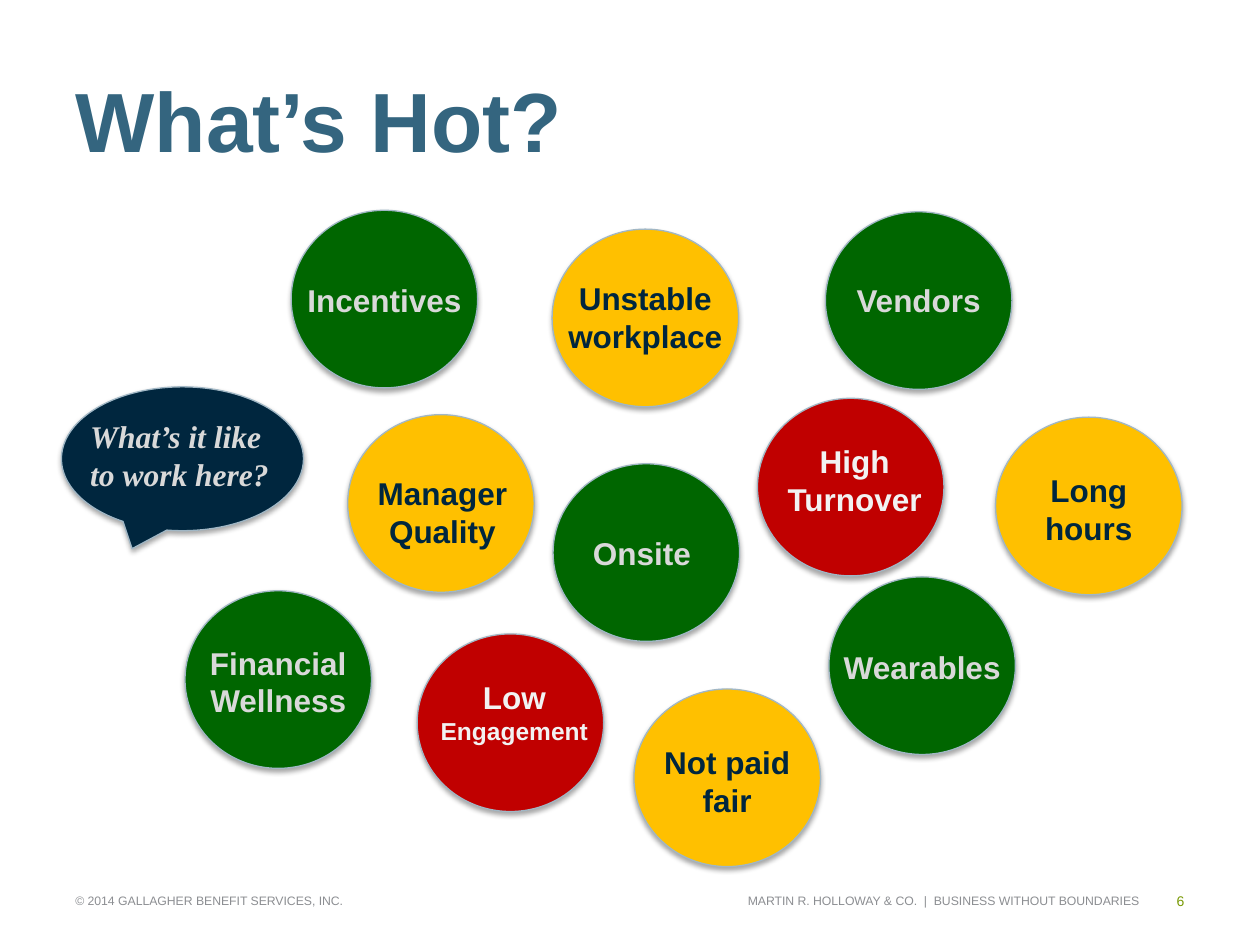
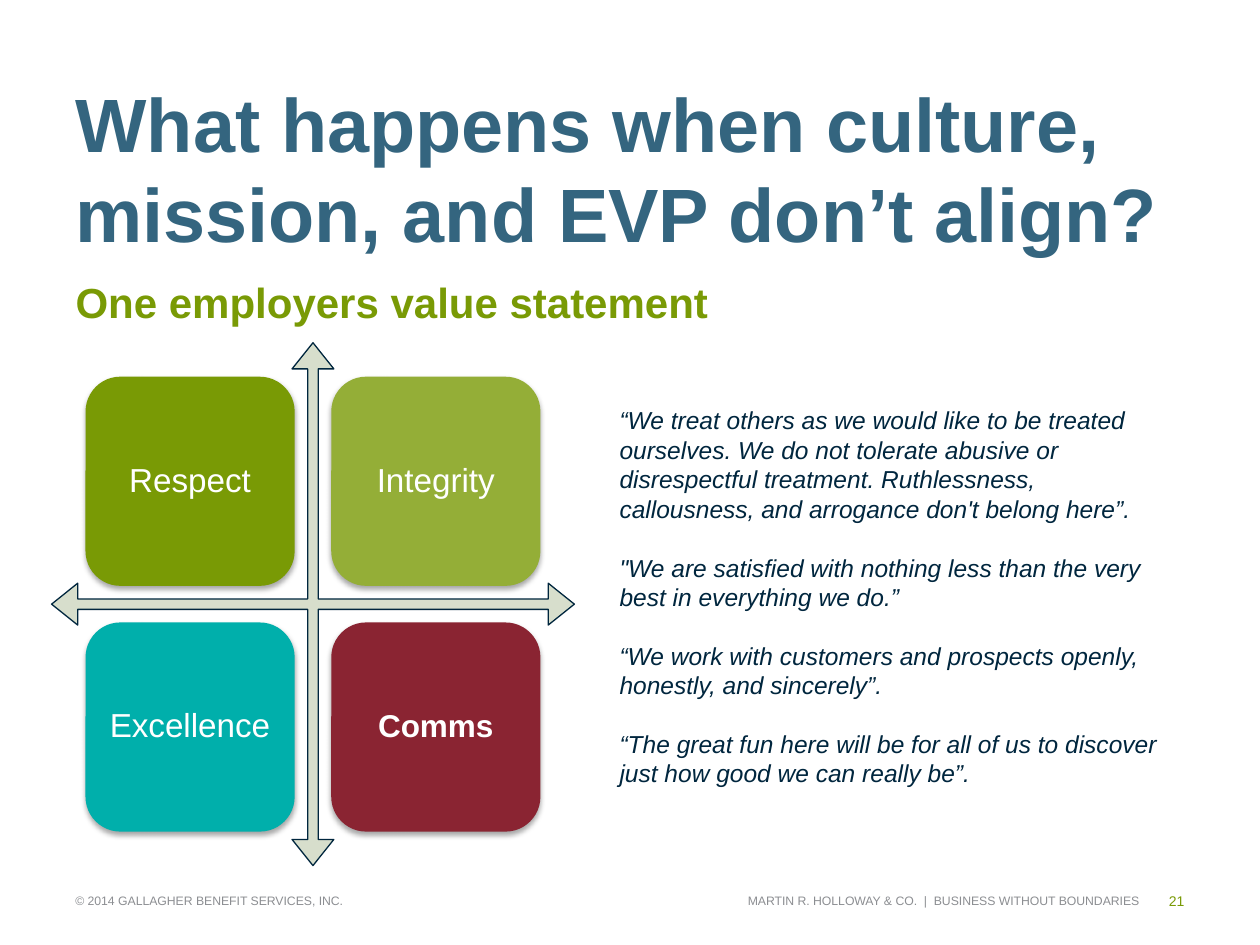
from pptx import Presentation
from pptx.dml.color import RGBColor
from pptx.enum.shapes import MSO_SHAPE as Shape
from pptx.enum.text import MSO_ANCHOR as Anchor, MSO_AUTO_SIZE as Fit, PP_ALIGN as Align
from pptx.oxml import parse_xml
from pptx.oxml.ns import nsdecls, qn
from pptx.util import Cm, Pt

HUES = {
    "title": "34657F", "olive": "799A05", "moss": "94AE37", "teal": "00AFAB",
    "wine": "8A2432", "navy": "00263E", "edge": "A1B7C5", "sage": "D7DECC",
    "green": "006600", "gold": "FFC000", "red": "C00000",
    "silver": "D9D9D9", "pale": "F2F2F2", "white": "FFFFFF", "grey": "8C8E92",
}
INKS = {"green": "silver", "gold": "navy", "red": "pale"}
SHADE = (
    f'<a:outerShdw {nsdecls("a")} blurRad="39370" dist="22860" dir="5400000" rotWithShape="0">'
    '<a:srgbClr val="000000"><a:alpha val="35000"/></a:srgbClr></a:outerShdw>'
)
OWNER = "© 2014 GALLAGHER BENEFIT SERVICES, INC."
BRAND = "MARTIN R. HOLLOWAY & CO.  |  BUSINESS WITHOUT BOUNDARIES"
BUBBLES = [
    ("green", 5.87, 4.24, 0, 1.3, ["Incentives"]),
    ("green", 16.71, 11.63, 0, 1.3, ["Wearables"]),
    ("green", 11.15, 9.35, 0, 1.3, ["Onsite "]),
    ("green", 16.64, 4.27, 0, 1.28, ["Vendors"]),
    ("green", 3.73, 11.91, 0, 0.94, ["Financial Wellness"]),
    ("gold", 20.07, 8.41, 0, 0.97, ["Long hours"]),
    ("gold", 12.78, 13.89, 0, 0.97, ["Not paid fair"]),
    ("gold", 11.13, 4.62, 0, 0.89, ["Unstable", "workplace"]),
    ("gold", 7.01, 8.36, 0.03, 1.07, ["Manager Quality"]),
    ("red", 15.27, 8.03, 0.08, 0.76, ["High Turnover"]),
    ("red", 8.41, 12.78, 0.08, 0.76, ["Low "]),
]
TILES = [
    ("olive", "Respect", 19, False), ("moss", "Integrity", 19, False),
    ("teal", "Excellence", 19, False), ("wine", "Comms", 18, True),
]
QUOTES = [
    "“We treat others as we would like to be treated ourselves. We do not tolerate "
    "abusive or disrespectful treatment. Ruthlessness, callousness, and arrogance "
    "don't belong here”.",
    "\"We are satisfied with nothing less than the very best in everything we do.”",
    "“We work with customers and prospects openly, honestly, and sincerely”.",
    "“The great fun here will be for all of us to discover just how good we can really be”.",
]


def tint(name):
    return RGBColor.from_string(HUES[name])


def write(frame, lines, size, ink, bold=False, italic=False, face="Arial",
          align=Align.LEFT, anchor=Anchor.TOP, gap=0):
    frame.word_wrap = True
    frame.auto_size = Fit.NONE
    frame.vertical_anchor = anchor
    for i, line in enumerate(lines):
        para = frame.paragraphs[0] if i == 0 else frame.add_paragraph()
        para.text = line
        para.alignment = align
        para.space_before = Pt(gap if i else 0)
        font = para.font
        font.name, font.size = face, Pt(size)
        font.bold, font.italic = bold, italic
        font.color.rgb = tint(ink)


def label(slide, box, lines, size, ink, **style):
    frame = slide.shapes.add_textbox(*map(Cm, box)).text_frame
    write(frame, lines, size, ink, **style)
    return frame


def draw(slide, kind, box, fill, line=None, shade=True):
    shape = slide.shapes.add_shape(kind, *map(Cm, box))
    shape.fill.solid()
    shape.fill.fore_color.rgb = tint(fill)
    if line:
        shape.line.color.rgb = tint(line)
        shape.line.width = Pt(0.75)
    else:
        shape.line.fill.background()
    shape.shadow.inherit = False
    if shade:
        shape._element.spPr.find(qn("a:effectLst")).append(parse_xml(SHADE))
    return shape


def place(holder, box):
    holder.left, holder.top, holder.width, holder.height = map(Cm, box)


def start(deck, layout, title, size, high, page):
    slide = deck.slides.add_slide(deck.slide_layouts[layout])
    place(slide.shapes.title, (1.27, 0.76, 22.86, high))
    write(slide.shapes.title.text_frame, [title], size, "title",
          bold=True, anchor=Anchor.BOTTOM)
    footer(slide, (1.27, 17.65, 22.86, 1.02), page)
    return slide


def footer(slide, box, page):
    left, top, width, high = box
    parts = [
        (0, 11.5, OWNER, 7, "grey", Align.LEFT),
        (11.5, 10.45, BRAND, 7, "grey", Align.RIGHT),
        (width - 0.9, 0.9, page, 8, "olive", Align.RIGHT),
    ]
    for x, wide, text, size, ink, align in parts:
        label(slide, (left + x, top, wide, high), [text], size, ink,
              align=align, anchor=Anchor.MIDDLE)


def bubble(slide, box, hue, shift, drop, lines):
    left, top, width, high = box
    draw(slide, Shape.OVAL, box, hue, "edge")
    return label(slide, (left + shift, top + drop, width, 1.8), lines, 18, INKS[hue],
                 bold=True, align=Align.CENTER)


def callout(slide, box, text):
    left, top, width, high = box
    draw(slide, Shape.OVAL_CALLOUT, box, "navy", "edge")
    label(slide, (left + 0.33, top + 0.48, width - 0.33, 1.8), [text], 18, "silver",
          bold=True, italic=True, face="Times New Roman")


def matrix(slide, box):
    left, top, width, high = box
    arrow = draw(slide, Shape.QUAD_ARROW, box, "sage", "navy", shade=False)
    for i, ratio in enumerate((0.02, 0.04, 0.05)):
        arrow.adjustments[i] = ratio
    side, inset = 0.4 * width, 0.065 * width
    step = width - 2 * inset - side
    for i, (hue, name, size, bold) in enumerate(TILES):
        row, col = divmod(i, 2)
        spot = (left + inset + col * step, top + inset + row * step, side, side)
        frame = draw(slide, Shape.ROUNDED_RECTANGLE, spot, hue).text_frame
        write(frame, [name], size, "white", bold=bold,
              align=Align.CENTER, anchor=Anchor.MIDDLE)
        frame.paragraphs[0].line_spacing = 0.9


def heading(slide, box, text):
    body = slide.placeholders[1]
    place(body, box)
    props = body.text_frame.paragraphs[0]._p.get_or_add_pPr()
    props.set("marL", "0")
    props.set("indent", "0")
    props.append(parse_xml(f'<a:buNone {nsdecls("a")}/>'))
    write(body.text_frame, [text], 24, "olive", bold=True, anchor=Anchor.BOTTOM)


def hot(deck):
    slide = start(deck, 5, "What’s Hot?", 48, 2.79, "6")
    for hue, left, top, shift, drop, lines in BUBBLES:
        frame = bubble(slide, (left, top, 3.76, 3.58), hue, shift, drop, lines)
    run = frame.paragraphs[0].add_run()
    run.text = "Engagement"
    run.font.size = Pt(14)
    callout(slide, (1.24, 7.8, 4.88, 2.9), "What’s it like to work here?")


def values(deck):
    title = "What happens when culture, mission, and EVP don’t align?"
    slide = start(deck, 1, title, 43.2, 4.57, "21")
    heading(slide, (1.27, 4.93, 20.35, 1.78), "One employers value statement")
    matrix(slide, (1.04, 6.91, 10.54, 10.54))
    label(slide, (12.24, 8.05, 11.43, 9.4), QUOTES, 14, "navy", italic=True, gap=16.8)


def main():
    deck = Presentation()
    deck.slide_width, deck.slide_height = Cm(25.4), Cm(19.05)
    hot(deck)
    values(deck)
    deck.save("out.pptx")


if __name__ == "__main__":
    main()
